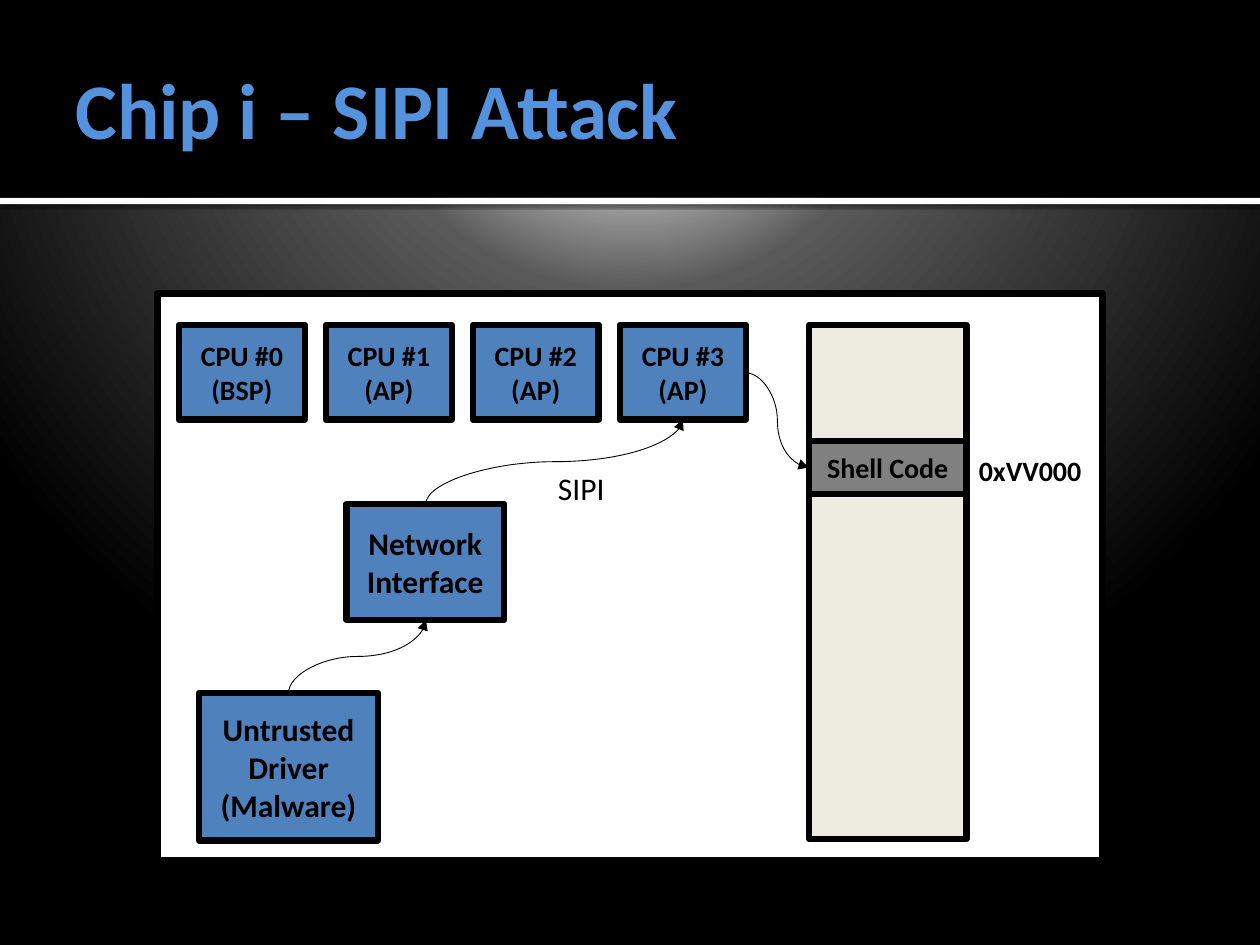
from dataclasses import dataclass

from pptx import Presentation
from pptx.dml.color import RGBColor
from pptx.enum.shapes import MSO_CONNECTOR, MSO_SHAPE
from pptx.enum.text import MSO_ANCHOR, PP_ALIGN
from pptx.oxml import parse_xml
from pptx.oxml.ns import nsdecls
from pptx.util import Inches, Pt

BLACK, WHITE, BLUE = "000000", "FFFFFF", "4F81BD"
EDGE = 3.78


@dataclass
class Box:
    left: float
    top: float
    width: float
    height: float
    fill: str
    text: str = ""
    size: int = 16
    edge: float = EDGE


@dataclass
class Label:
    left: float
    top: float
    width: float
    height: float
    text: str
    size: int
    bold: bool
    wrap: bool


@dataclass
class Curve:
    start: tuple[float, float]
    end: tuple[float, float]
    rising: bool = False


def tint(code: str) -> RGBColor:
    return RGBColor.from_string(code)


def style(frame, size: int, color: str, bold: bool, align=PP_ALIGN.LEFT) -> None:
    for line in frame.paragraphs:
        line.alignment = align
        for run in line.runs:
            font = run.font
            font.name, font.size, font.bold = "Calibri", Pt(size), bold
            font.color.rgb = tint(color)


def draw_box(slide, box: Box):
    shape = slide.shapes.add_shape(
        MSO_SHAPE.RECTANGLE,
        Inches(box.left), Inches(box.top), Inches(box.width), Inches(box.height),
    )
    shape.shadow.inherit = False
    shape.fill.solid()
    shape.fill.fore_color.rgb = tint(box.fill)
    if box.edge:
        shape.line.color.rgb = tint(BLACK)
        shape.line.width = Pt(box.edge)
    else:
        shape.line.fill.background()
    if box.text:
        frame = shape.text_frame
        frame.text = box.text
        frame.vertical_anchor = MSO_ANCHOR.MIDDLE
        style(frame, box.size, BLACK, True, PP_ALIGN.CENTER)
    return shape


def draw_label(slide, label: Label) -> None:
    frame = slide.shapes.add_textbox(
        Inches(label.left), Inches(label.top), Inches(label.width), Inches(label.height)
    ).text_frame
    frame.word_wrap = label.wrap
    frame.text = label.text
    style(frame, label.size, BLACK, label.bold)


def draw_curve(slide, curve: Curve) -> None:
    (x1, y1), (x2, y2) = curve.start, curve.end
    if curve.rising:
        mid_x, mid_y = (x1 + x2) / 2, (y1 + y2) / 2
        half_w, half_h = (y1 - y2) / 2, (x2 - x1) / 2
        x1, y1 = mid_x + half_w, mid_y + half_h
        x2, y2 = mid_x - half_w, mid_y - half_h
    line = slide.shapes.add_connector(
        MSO_CONNECTOR.CURVE, Inches(x1), Inches(y1), Inches(x2), Inches(y2)
    )
    line.line.color.rgb = tint(BLACK)
    line.line.width = Pt(0.5)
    props = line._element.spPr
    if curve.rising:
        props.xfrm.set("rot", "5400000")
    props.ln.append(parse_xml(f'<a:tailEnd {nsdecls("a")} type="triangle"/>'))
    props.append(parse_xml(f'<a:effectLst {nsdecls("a")}/>'))


def paint_back(slide) -> None:
    stops = [(12, "C0C0C0"), (20, "BEBEBE"), (37, "595959"), (100, BLACK)]
    marks = "".join(
        f'<a:gs pos="{at * 1000}"><a:srgbClr val="{code}"/></a:gs>' for at, code in stops
    )
    slide._element.cSld.insert(0, parse_xml(
        f'<p:bg {nsdecls("p", "a")}><p:bgPr><a:gradFill rotWithShape="1">'
        f'<a:gsLst>{marks}</a:gsLst><a:path path="circle">'
        '<a:fillToRect l="10000" t="-25000" r="10000" b="125000"/></a:path>'
        '</a:gradFill><a:effectLst/></p:bgPr></p:bg>'
    ))


def draw_head(slide) -> None:
    rule = draw_box(slide, Box(0, 1.57, 10, 0.05, WHITE, edge=0))
    rule._element.spPr.find(".//{*}effectLst").append(parse_xml(
        f'<a:outerShdw {nsdecls("a")} blurRad="{Pt(2.5)}" dist="{Pt(0.8)}" dir="5400000">'
        f'<a:srgbClr val="{BLACK}"><a:alpha val="60000"/></a:srgbClr></a:outerShdw>'
    ))
    draw_box(slide, Box(0, 0, 10, 1.57, BLACK, edge=0))
    title = slide.shapes.title
    title.left, title.top = Inches(0.5), Inches(0.17)
    title.width, title.height = Inches(9), Inches(1.37)
    frame = title.text_frame
    frame.text = "Chip i – SIPI Attack"
    frame.vertical_anchor = MSO_ANCHOR.MIDDLE
    frame.margin_left = Inches(0.1)
    frame.margin_right = frame.margin_top = frame.margin_bottom = Inches(0.05)
    style(frame, 45, "5492DE", True)
    slide.shapes._spTree.append(title._element)


def main() -> None:
    deck = Presentation()
    deck.slide_width, deck.slide_height = Inches(10), Inches(7.5)
    slide = deck.slides.add_slide(deck.slide_layouts[5])
    paint_back(slide)
    draw_head(slide)

    roles = ["BSP", "AP", "AP", "AP"]
    chips = [
        Box(1.42 + 3.5 / 3 * i, 2.58, 1, 0.75, BLUE, f"CPU #{i}\n({role})")
        for i, role in enumerate(roles)
    ]
    boxes = [
        Box(1.25, 2.33, 7.5, 4.5, WHITE),
        *chips,
        Box(6.42, 2.58, 1.25, 4.08, "EEECE1"),
        Box(6.42, 3.5, 1.25, 0.42, "808080", "Shell Code"),
        Box(1.58, 5.5, 1.42, 1.17, BLUE, "Untrusted\nDriver\n(Malware)", 18),
        Box(2.75, 4, 1.25, 0.92, BLUE, "Network\nInterface", 18),
    ]
    for box in boxes:
        draw_box(slide, box)

    curves = [
        Curve((2.29, 5.5), (3.38, 4.92), True),
        Curve((3.38, 4), (5.42, 3.33), True),
        Curve((5.92, 2.96), (6.42, 3.71)),
    ]
    for curve in curves:
        draw_curve(slide, curve)

    labels = [
        Label(7.67, 3.55, 1.07, 0.37, "0xVV000", 16, True, True),
        Label(4.33, 3.67, 0.61, 0.4, "SIPI", 18, False, False),
    ]
    for label in labels:
        draw_label(slide, label)

    deck.save("out.pptx")


if __name__ == "__main__":
    main()
